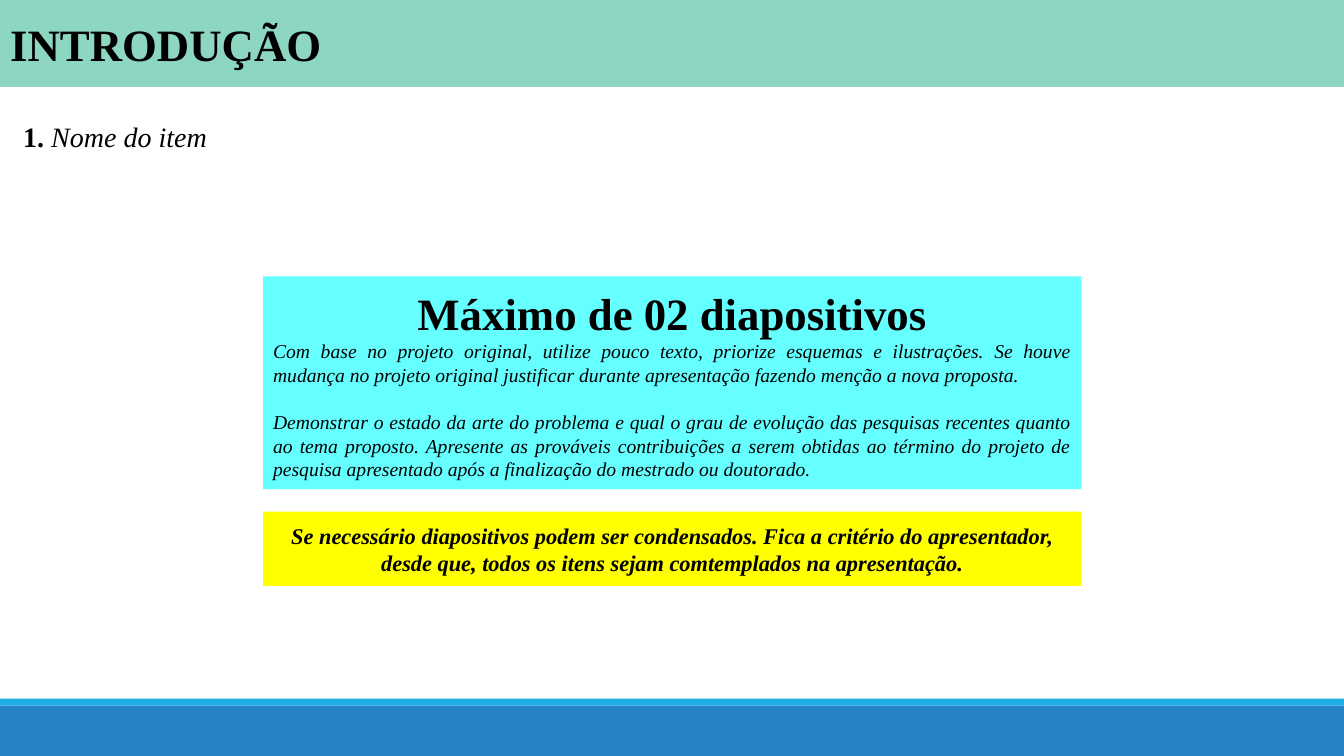
import pptx
import pptx.dml.color
import pptx.enum.shapes
import pptx.enum.text
import pptx.util

Pt = pptx.util.Pt
ALIGN = pptx.enum.text.PP_ALIGN
ANCHOR = pptx.enum.text.MSO_ANCHOR

COLORS = {
    "black": "000000",
    "header": "8DD6C1",
    "footer": "2683C6",
    "footer_edge": "1CADE4",
    "guidance": "66FFFF",
    "remark": "FFFF00",
}
FONT = "Times New Roman"
SLIDE_WIDTH, SLIDE_HEIGHT = 960, 540
PANEL_LEFT, PANEL_WIDTH = 188, 584.5


def color(name):
    return pptx.dml.color.RGBColor.from_string(COLORS[name])


def place(shape, box):
    for side, length in zip(("left", "top", "width", "height"), box):
        setattr(shape, side, Pt(length))


def add_panel(slide, box, fill):
    shape = slide.shapes.add_shape(
        pptx.enum.shapes.MSO_SHAPE.RECTANGLE, *(Pt(length) for length in box))
    shape.shadow.inherit = False
    shape.fill.solid()
    shape.fill.fore_color.rgb = color(fill)
    shape.line.fill.background()
    return shape


def write(paragraph, runs, align=ALIGN.LEFT, **spacing):
    """Fill a paragraph with (text, font values) runs."""
    paragraph.alignment = align
    for name, value in spacing.items():
        setattr(paragraph, name, value)
    for text, values in runs:
        run = paragraph.add_run()
        run.text = text
        run.font.color.rgb = color("black")
        for name, value in {"name": FONT, **values}.items():
            setattr(run.font, name, value)


def set_frame(shape, anchor=ANCHOR.MIDDLE, wrap=True):
    frame = shape.text_frame
    frame.word_wrap = wrap
    frame.vertical_anchor = anchor
    frame.auto_size = pptx.enum.text.MSO_AUTO_SIZE.NONE
    return frame


def add_footer(slide, box):
    left, top, width, height = box
    edge = 5
    add_panel(slide, (left, top + edge, width, height - edge), "footer")
    add_panel(slide, (left, top, width, edge), "footer_edge")


def add_header(slide, box):
    title = slide.shapes.title
    place(title, box)
    title.fill.solid()
    title.fill.fore_color.rgb = color("header")
    frame = set_frame(title)
    write(frame.paragraphs[0], [("INTRODUÇÃO", {"size": Pt(32), "bold": True})],
          line_spacing=1.0)


def add_item(slide, box):
    item = slide.shapes.add_textbox(*(Pt(length) for length in box))
    frame = set_frame(item, ANCHOR.TOP, wrap=False)
    write(frame.paragraphs[0], [
        ("1. ", {"size": Pt(20), "bold": True}),
        ("Nome do item", {"size": Pt(20), "italic": True}),
    ])


def add_guidance(slide, box):
    frame = set_frame(add_panel(slide, box, "guidance"))
    body = {"size": Pt(14), "italic": True}
    write(frame.paragraphs[0],
          [("Máximo de 02 diapositivos", {"size": Pt(32), "bold": True})], ALIGN.CENTER)
    write(frame.add_paragraph(), [(
        "Com base no projeto original, utilize pouco texto, priorize esquemas e "
        "ilustrações. Se houve mudança no projeto original justificar durante "
        "apresentação fazendo menção a nova proposta.", body)], ALIGN.JUSTIFY)
    write(frame.add_paragraph(), [(
        "Demonstrar o estado da arte do problema e qual o grau de evolução das "
        "pesquisas recentes quanto ao tema proposto. Apresente as prováveis "
        "contribuições a serem obtidas ao término do projeto de pesquisa apresentado "
        "após a finalização do mestrado ou doutorado.", body)],
        ALIGN.JUSTIFY, space_before=Pt(17))


def add_remark(slide, box):
    frame = set_frame(add_panel(slide, box, "remark"))
    write(frame.paragraphs[0], [(
        "Se necessário diapositivos podem ser condensados. Fica a critério do "
        "apresentador, desde que, todos os itens sejam comtemplados na apresentação.",
        {"size": Pt(16), "bold": True, "italic": True})], ALIGN.CENTER)


def main():
    presentation = pptx.Presentation()
    presentation.slide_width = Pt(SLIDE_WIDTH)
    presentation.slide_height = Pt(SLIDE_HEIGHT)
    slide = presentation.slides.add_slide(presentation.slide_layouts[5])
    add_footer(slide, (0, 499, SLIDE_WIDTH, 41))
    add_header(slide, (0, 0, SLIDE_WIDTH, 62))
    add_item(slide, (9.5, 81.5, 150, 31.5))
    add_guidance(slide, (PANEL_LEFT, 197.5, PANEL_WIDTH, 152))
    add_remark(slide, (PANEL_LEFT, 365.5, PANEL_WIDTH, 53))
    presentation.save("out.pptx")


if __name__ == "__main__":
    main()
